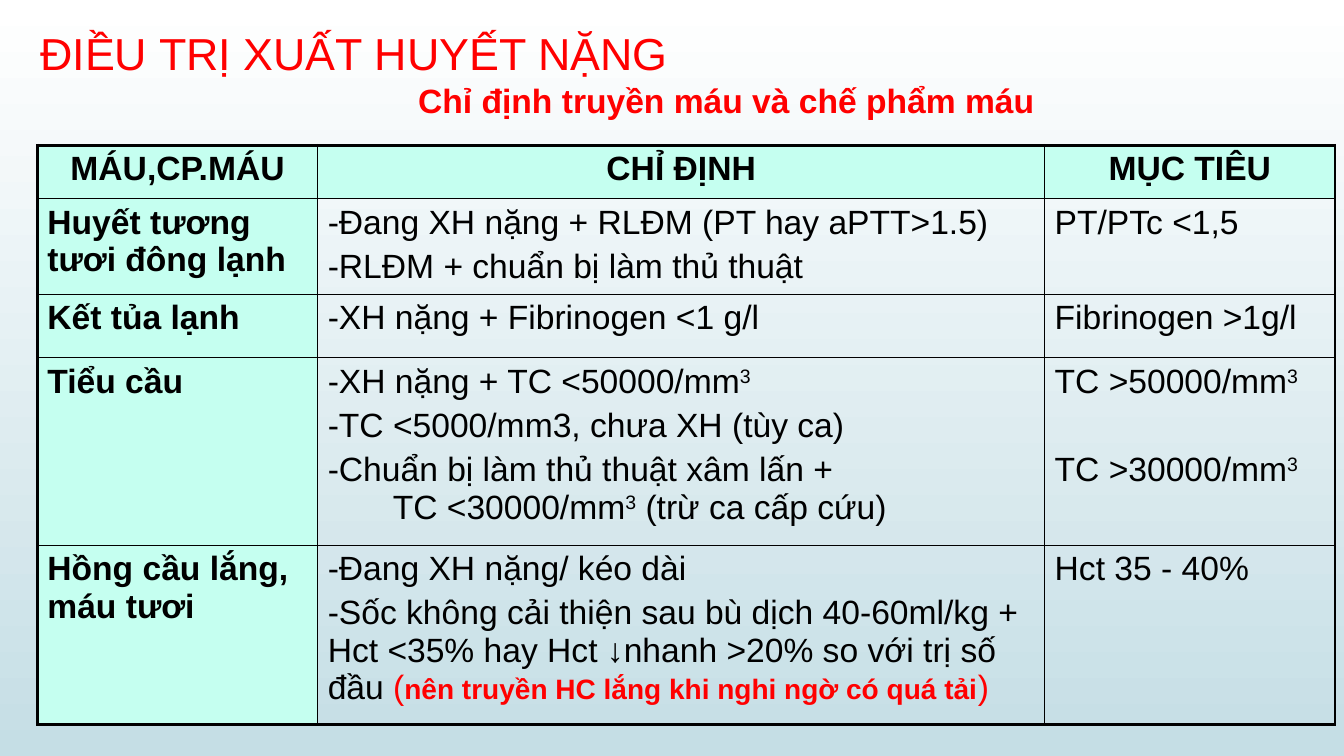
from lxml import etree
from pptx import Presentation
from pptx.dml.color import RGBColor
from pptx.enum.text import MSO_ANCHOR, PP_ALIGN
from pptx.oxml.ns import qn
from pptx.util import Inches, Pt

TOP = MSO_ANCHOR.TOP
LEFT, MID = PP_ALIGN.LEFT, PP_ALIGN.CENTER
BLACK, RED, MINT = "000000", "FF0000", "C5FFF0"
COLS = [20.86, 54.09, 21.61]
ROWS = [7.07, 12.67, 8.4, 24.8, 23.73]
CUBE = ("3", "sup")
DATA = [
    [["MÁU,CP.MÁU"], ["CHỈ ĐỊNH"], ["MỤC TIÊU"]],
    [["Huyết tương tươi đông lạnh"],
     ["-Đang XH nặng + RLĐM (PT hay aPTT>1.5)", "-RLĐM + chuẩn bị làm thủ thuật"],
     ["PT/PTc <1,5"]],
    [["Kết tủa lạnh"], ["-XH nặng + Fibrinogen <1 g/l"], ["Fibrinogen >1g/l"]],
    [["Tiểu cầu"],
     [[("-XH nặng + TC <50000/mm", ""), CUBE],
      "-TC <5000/mm3, chưa XH (tùy ca)",
      [("-Chuẩn bị làm thủ thuật xâm lấn +", ""), ("", "break"),
       ("TC <30000/mm", ""), CUBE, (" (trừ ca cấp cứu)", "")]],
     [[("TC >50000/mm", ""), CUBE], [("TC >30000/mm", ""), CUBE]]],
    [["Hồng cầu lắng, máu tươi"],
     ["-Đang XH nặng/ kéo dài",
      [("-Sốc không cải thiện sau bù dịch 40-60ml/kg + Hct <35% hay Hct "
        "↓nhanh >20% so với trị số đầu ", ""),
       ("(", "red"), ("nên truyền HC lắng khi nghi ngờ có quá tải", "note"), (")", "red")]],
     ["Hct 35 - 40%"]],
]


def paint(code):
    return RGBColor.from_string(code)


class Deck:
    """Holds the text style and current slide; lengths are percent of slide size."""

    def __init__(self):
        self.file = Presentation()
        self.file.slide_width, self.file.slide_height = Inches(13.33), Inches(7.5)
        self.slide = self.file.slides.add_slide(self.file.slide_layouts[5])
        self.face = "Arial"

    def wide(self, share):
        return round(self.file.slide_width * share / 100)

    def high(self, share):
        return round(self.file.slide_height * share / 100)

    def box(self, left, top, width, height):
        return self.wide(left), self.high(top), self.wide(width), self.high(height)

    def back(self, first, last):
        fill = self.slide.background.fill
        fill.gradient()
        fill.gradient_angle = 270
        for stop, code in zip(fill.gradient_stops, (first, last)):
            stop.color.rgb = paint(code)

    def prose(self, para, text, size=24, code=BLACK, bold=False, align=LEFT):
        para.alignment = align
        font = para.font
        font.name, font.size, font.bold = self.face, Pt(size), bold
        font.color.rgb = paint(code)
        for part, mark in [(text, "")] if isinstance(text, str) else text:
            if mark == "break":
                para.add_line_break()
                continue
            run = para.add_run()
            run.text = part
            if mark == "sup":
                run._r.get_or_add_rPr().set("baseline", "30000")
            elif mark:
                run.font.color.rgb = paint(RED)
            if mark == "note":
                run.font.size, run.font.bold = Pt(20), True

    def title(self, text, area):
        shape = self.slide.shapes.title
        shape.left, shape.top, shape.width, shape.height = self.box(*area)
        frame = shape.text_frame
        frame.vertical_anchor = TOP
        frame.margin_left, frame.margin_top = Inches(0.22), Inches(0.11)
        para = frame.paragraphs[0]
        para.line_spacing = 1.0
        self.prose(para, text, 32, RED)

    def label(self, text, area):
        frame = self.slide.shapes.add_textbox(*self.box(*area)).text_frame
        frame.word_wrap = False
        self.prose(frame.paragraphs[0], text, 24, RED, True)

    def edge(self, cell, side, width):
        line = etree.SubElement(cell._tc.get_or_add_tcPr(), qn("a:ln" + side), w=str(Pt(width)))
        fill = etree.SubElement(line, qn("a:solidFill"))
        etree.SubElement(fill, qn("a:srgbClr"), val=BLACK)

    def cell(self, cell, texts, sides, head, side):
        for name, outer in sides.items():
            self.edge(cell, name, 2.25 if outer else 1)
        if head or side:
            cell.fill.solid()
            cell.fill.fore_color.rgb = paint(MINT)
        else:
            cell.fill.background()
        frame = cell.text_frame
        for i, text in enumerate(texts):
            para = frame.add_paragraph() if i else frame.paragraphs[0]
            para.space_before = Pt(4.8 if i else 0)
            self.prose(para, text, bold=head or side, align=MID if head else LEFT)

    def table(self, data, left, top, cols, rows):
        area = self.box(left, top, sum(cols), sum(rows))
        grid = self.slide.shapes.add_table(len(rows), len(cols), *area).table
        grid.first_row = grid.horz_banding = False
        for col, share in zip(grid.columns, cols):
            col.width = self.wide(share)
        for row, share in zip(grid.rows, rows):
            row.height = self.high(share)
        for r, line in enumerate(data):
            for c, texts in enumerate(line):
                sides = {"L": c == 0, "R": c == len(cols) - 1,
                         "T": r == 0, "B": r == len(rows) - 1}
                self.cell(grid.cell(r, c), texts, sides, r == 0, c == 0)
        return grid

    def hang(self, para, share):
        props = para._p.get_or_add_pPr()
        props.set("marL", str(self.wide(share)))
        props.set("indent", str(-self.wide(share)))


def main():
    deck = Deck()
    deck.back("FFFFFF", "C5DEE5")
    grid = deck.table(DATA, 2.78, 19.2, COLS, ROWS)
    deck.hang(grid.cell(3, 1).text_frame.paragraphs[2], 4.84)
    grid.cell(3, 2).text_frame.paragraphs[1].space_before = Pt(36)
    deck.title("ĐIỀU TRỊ XUẤT HUYẾT NẶNG", (1.35, 1.87, 84.4, 11.07))
    deck.label("Chỉ định truyền máu và chế phẩm máu", (30.38, 9.87, 47.34, 6.67))
    deck.file.save("out.pptx")


if __name__ == "__main__":
    main()
